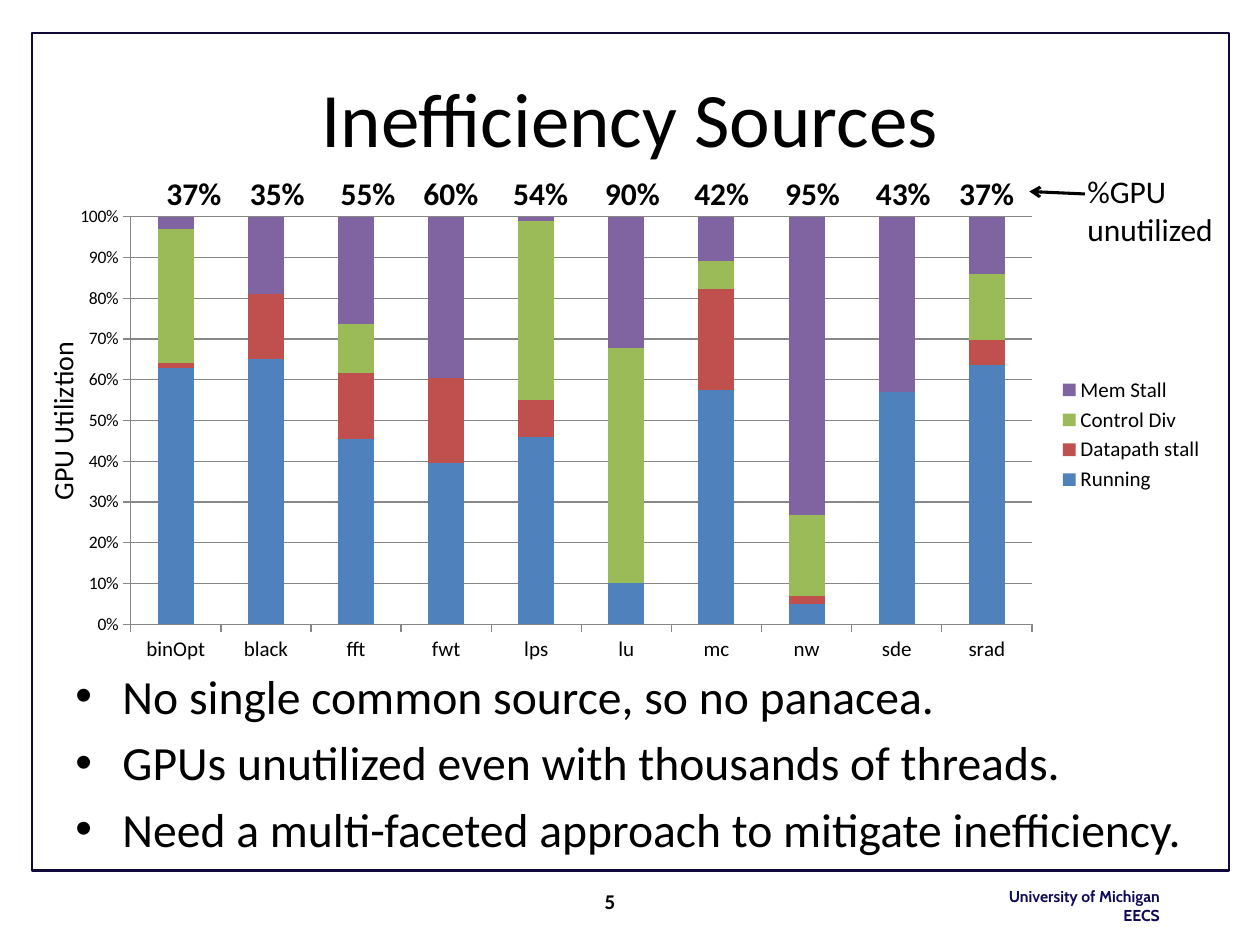
from dataclasses import dataclass
from typing import Any

from lxml import etree
from pptx import Presentation
from pptx.chart.data import CategoryChartData
from pptx.dml.color import RGBColor
from pptx.enum.chart import XL_CHART_TYPE, XL_LEGEND_POSITION, XL_TICK_MARK
from pptx.enum.shapes import MSO_CONNECTOR, MSO_SHAPE
from pptx.enum.text import MSO_ANCHOR, PP_ALIGN
from pptx.oxml import parse_xml
from pptx.oxml.ns import nsdecls, qn
from pptx.util import Cm, Pt

STACKED_COLUMNS = XL_CHART_TYPE.COLUMN_STACKED_100
LEGEND_RIGHT = XL_LEGEND_POSITION.RIGHT
TICK_OUTSIDE = XL_TICK_MARK.OUTSIDE
STRAIGHT = MSO_CONNECTOR.STRAIGHT
RECTANGLE = MSO_SHAPE.RECTANGLE
TOP, MIDDLE = MSO_ANCHOR.TOP, MSO_ANCHOR.MIDDLE
LEFT, CENTER, RIGHT = PP_ALIGN.LEFT, PP_ALIGN.CENTER, PP_ALIGN.RIGHT
BLACK, NAVY, INDIGO, GRID_GRAY = "000000", "10093A", "0F0958", "878787"


@dataclass
class Box:
    left: float
    top: float
    width: float
    height: float

    def lengths(self) -> list[int]:
        return [Cm(v) for v in (self.left, self.top, self.width, self.height)]


@dataclass
class Activity:
    name: str
    shares: list[int]
    color: str


@dataclass
class Unutilized:
    label: str
    center: float


BENCHMARKS = ["binOpt", "black", "fft", "fwt", "lps", "lu", "mc", "nw", "sde", "srad"]
ACTIVITIES = [
    Activity("Running", [63, 65, 45, 40, 46, 10, 58, 5, 57, 63], "4F81BD"),
    Activity("Datapath stall", [1, 16, 16, 21, 9, 0, 25, 2, 0, 6], "C0504D"),
    Activity("Control Div", [33, 0, 12, 0, 44, 57, 7, 20, 0, 16], "9BBB59"),
    Activity("Mem Stall", [3, 19, 26, 40, 1, 32, 11, 74, 43, 14], "8064A2"),
]
UNUTILIZED = [
    Unutilized("37%", 0.99), Unutilized("35%", 2.67), Unutilized("55%", 4.5),
    Unutilized("60%", 6.17), Unutilized("54%", 7.98), Unutilized("90%", 9.83),
    Unutilized("42%", 11.63), Unutilized("95%", 13.46), Unutilized("43%", 15.29),
    Unutilized("37%", 16.97),
]
FINDINGS = [
    "No single common source, so no panacea.",
    "GPUs unutilized even with thousands of threads.",
    "Need a multi-faceted approach to mitigate inefficiency.",
]


def rgb(value: str) -> RGBColor:
    return RGBColor.from_string(value)


def style_font(font: Any, size: float, color: str = BLACK,
               name: str = "Calibri", bold: bool = False) -> None:
    font.size, font.name, font.bold = Pt(size), name, bold
    font.color.rgb = rgb(color)


def add_bullet(paragraph: Any, indent: float) -> None:
    properties = paragraph._p.get_or_add_pPr()
    properties.set("marL", str(Cm(indent)))
    properties.set("indent", str(-Cm(indent)))
    etree.SubElement(properties, qn("a:buFont"), typeface="Arial")
    etree.SubElement(properties, qn("a:buChar"), char="•")


def add_center_tabs(paragraph: Any, centers: list[float]) -> None:
    tabs = etree.SubElement(paragraph._p.get_or_add_pPr(), qn("a:tabLst"))
    for center in centers:
        etree.SubElement(tabs, qn("a:tab"), pos=str(Cm(center)), algn="ctr")


def write(shape: Any, text: str, *, size: float, color: str = BLACK,
          name: str = "Calibri", bold: bool = False, align: PP_ALIGN = LEFT,
          anchor: MSO_ANCHOR = TOP, inset: float | None = None, gap: float = 0,
          bullet_indent: float = 0, tabs: list[float] | None = None) -> None:
    frame = shape.text_frame
    frame.word_wrap = True
    frame.vertical_anchor = anchor
    if inset is not None:
        frame.margin_left = frame.margin_right = Cm(inset)
        frame.margin_top = frame.margin_bottom = Cm(inset)
    for index, line in enumerate(text.split("\n")):
        paragraph = frame.add_paragraph() if index else frame.paragraphs[0]
        paragraph.alignment = align
        if index and gap:
            paragraph.space_before = Pt(gap)
        if bullet_indent:
            add_bullet(paragraph, bullet_indent)
        if tabs:
            add_center_tabs(paragraph, tabs)
        run = paragraph.add_run()
        run.text = line
        style_font(run.font, size, color, name, bold)


def add_label(slide: Any, box: Box, text: str, rotation: float = 0, **style: Any) -> None:
    label = slide.shapes.add_textbox(*box.lengths())
    label.rotation = rotation
    write(label, text, **style)


def add_frame(slide: Any, box: Box) -> None:
    border = slide.shapes.add_shape(RECTANGLE, *box.lengths())
    border.shadow.inherit = False
    border.fill.background()
    border.line.color.rgb = rgb(NAVY)
    border.line.width = Pt(1.25)


def set_plot_area(chart: Any, x: float, y: float, w: float, h: float) -> None:
    plot_area = chart._chartSpace.chart.plotArea
    for old in plot_area.findall(qn("c:layout")):
        plot_area.remove(old)
    layout = parse_xml(
        f'<c:layout {nsdecls("c")}><c:manualLayout><c:layoutTarget val="inner"/>'
        '<c:xMode val="edge"/><c:yMode val="edge"/>'
        f'<c:x val="{x}"/><c:y val="{y}"/><c:w val="{w}"/><c:h val="{h}"/>'
        '</c:manualLayout></c:layout>')
    plot_area.insert(0, layout)


def add_utilization_chart(slide: Any, box: Box) -> None:
    data = CategoryChartData(number_format="0")
    data.categories = BENCHMARKS
    for activity in ACTIVITIES:
        data.add_series(activity.name, activity.shares)
    chart = slide.shapes.add_chart(STACKED_COLUMNS, *box.lengths(), data).chart
    style_font(chart.font, 10)
    chart.has_title = False
    chart.has_legend = True
    chart.legend.position = LEGEND_RIGHT
    chart.legend.include_in_layout = False
    style_font(chart.legend.font, 12)
    plot = chart.plots[0]
    plot.gap_width, plot.overlap, plot.vary_by_categories = 150, 100, False
    for series, activity in zip(plot.series, ACTIVITIES):
        series.format.fill.solid()
        series.format.fill.fore_color.rgb = rgb(activity.color)
    for axis, size in ((chart.category_axis, 12), (chart.value_axis, 10)):
        axis.major_tick_mark = TICK_OUTSIDE
        axis.format.line.color.rgb = rgb(GRID_GRAY)
        style_font(axis.tick_labels.font, size)
    scale = chart.value_axis
    scale.minimum_scale, scale.maximum_scale, scale.major_unit = 0, 1, 0.1
    scale.major_gridlines.format.line.color.rgb = rgb(GRID_GRAY)
    scale.tick_labels.number_format = "0%"
    scale.tick_labels.number_format_is_linked = False
    set_plot_area(chart, 0.06, 0.04, 0.78, 0.86)


def add_arrow(slide: Any, start: tuple[float, float], end: tuple[float, float]) -> None:
    arrow = slide.shapes.add_connector(STRAIGHT, *[Cm(v) for v in start + end])
    arrow.line.color.rgb = rgb(BLACK)
    arrow.line.width = Pt(1.75)
    etree.SubElement(arrow.line._get_or_add_ln(), qn("a:tailEnd"), type="arrow")
    etree.SubElement(arrow._element.spPr, qn("a:effectLst"))


def main() -> None:
    deck = Presentation()
    deck.slide_width, deck.slide_height = Cm(25.4), Cm(19.05)
    slide = deck.slides.add_slide(deck.slide_layouts[5])

    add_label(slide, Box(19.69, 17.75, 3.94, 1.02), "University of Michigan\nEECS",
              size=9, color=INDIGO, name="Cabin", bold=True, align=RIGHT)
    add_frame(slide, Box(0.64, 0.66, 24.13, 16.89))
    add_utilization_chart(slide, Box(1.24, 3.99, 23.29, 9.55))

    title = slide.shapes.title
    title.left, title.top, title.width, title.height = Box(1.27, 0.76, 22.86, 3.18).lengths()
    write(title, "Inefficiency Sources", size=44, align=CENTER, anchor=MIDDLE)

    add_label(slide, Box(1.27, 13.31, 22.86, 3.71), "\n".join(FINDINGS),
              size=27.2, gap=5.4, bullet_indent=0.95)
    add_label(slide, Box(21.67, 3.35, 3.07, 1.8), "%GPU unutilized", size=18)
    add_label(slide, Box(11.94, 17.65, 12.19, 1.02), "5", size=12, bold=True, anchor=MIDDLE)
    add_label(slide, Box(2.92, 3.51, 18.34, 0.76),
              "".join(f"\t{share.label}" for share in UNUTILIZED),
              size=18, bold=True, inset=0, tabs=[share.center for share in UNUTILIZED])
    add_label(slide, Box(-2.74, 5.87, 8, 0.94), "GPU Utiliztion", rotation=270, size=16)
    add_arrow(slide, (21.87, 3.91), (20.75, 3.86))

    deck.save("out.pptx")


if __name__ == "__main__":
    main()
